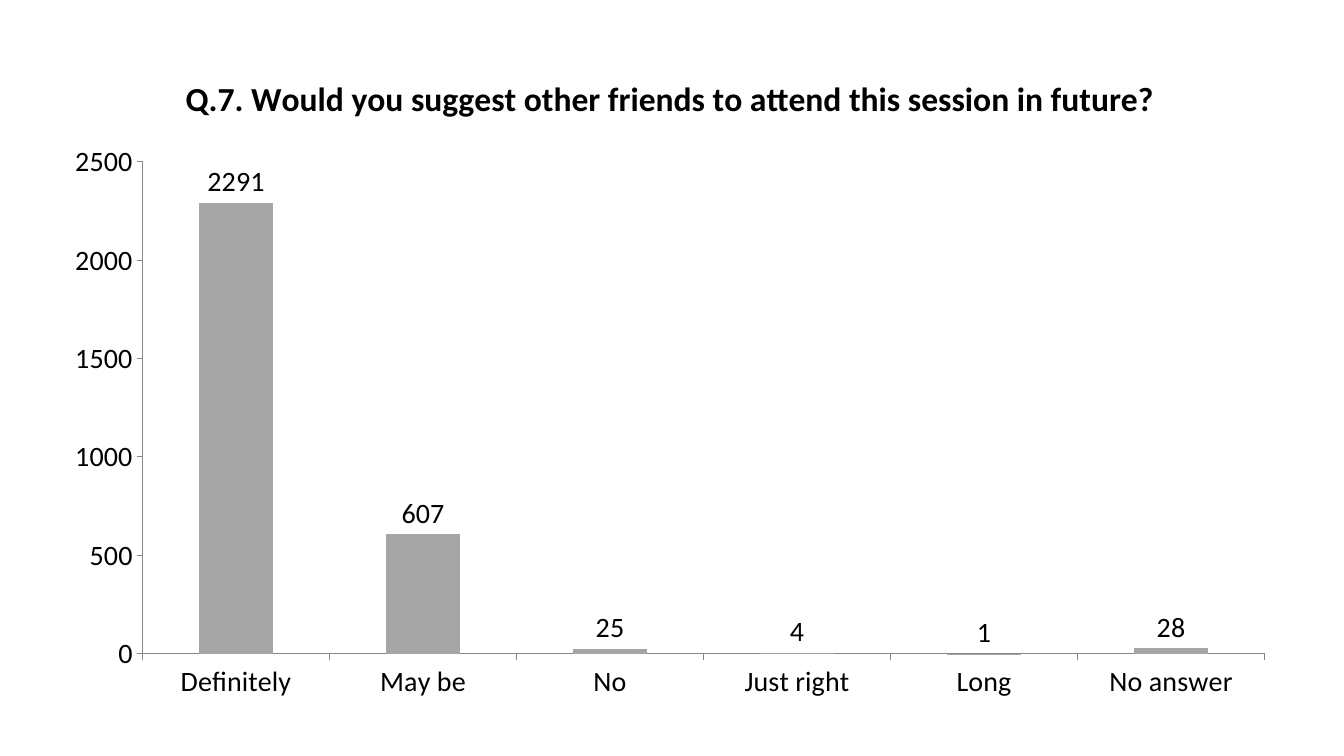
from typing import NamedTuple

import pptx
import pptx.chart.axis
import pptx.chart.data
import pptx.dml.color
import pptx.enum.chart
import pptx.util

Pt = pptx.util.Pt
BLACK = pptx.dml.color.RGBColor(0x00, 0x00, 0x00)
GRAY = pptx.dml.color.RGBColor(0xA5, 0xA5, 0xA5)
LINE = pptx.dml.color.RGBColor(0x86, 0x86, 0x86)
FONT = "Calibri"
TITLE = "Q.7. Would you suggest other friends to attend this session in future?"


class Answer(NamedTuple):
    label: str
    count: int


ANSWERS = [
    Answer("Definitely", 2291),
    Answer("May be", 607),
    Answer("No", 25),
    Answer("Just right", 4),
    Answer("Long", 1),
    Answer("No answer", 28),
]


def style_axis(axis: pptx.chart.axis._BaseAxis) -> None:
    axis.has_major_gridlines = False
    axis.major_tick_mark = pptx.enum.chart.XL_TICK_MARK.OUTSIDE
    axis.minor_tick_mark = pptx.enum.chart.XL_TICK_MARK.NONE
    axis.format.line.color.rgb = LINE
    axis.format.line.width = Pt(0.75)


def main() -> None:
    deck = pptx.Presentation()
    deck.slide_width, deck.slide_height = Pt(960), Pt(540)
    slide = deck.slides.add_slide(deck.slide_layouts[6])

    data = pptx.chart.data.CategoryChartData()
    data.categories = [answer.label for answer in ANSWERS]
    data.add_series(TITLE, [answer.count for answer in ANSWERS])
    chart = slide.shapes.add_chart(
        pptx.enum.chart.XL_CHART_TYPE.COLUMN_CLUSTERED,
        Pt(36), Pt(36.7), Pt(885), Pt(471.6), data,
    ).chart
    chart.font.name = FONT
    chart.font.size = Pt(20)
    chart.font.color.rgb = BLACK
    chart.has_legend = False

    chart.has_title = True
    chart.chart_title.include_in_layout = False
    head = chart.chart_title.text_frame.paragraphs[0]
    head.text = TITLE
    head.font.name = FONT
    head.font.size = Pt(24)
    head.font.bold = True
    head.font.color.rgb = BLACK

    style_axis(chart.category_axis)
    style_axis(chart.value_axis)
    chart.value_axis.minimum_scale = 0
    chart.value_axis.maximum_scale = 2500
    chart.value_axis.major_unit = 500

    plot = chart.plots[0]
    plot.gap_width = 150
    plot.vary_by_categories = False
    bars = plot.series[0].format
    bars.fill.solid()
    bars.fill.fore_color.rgb = GRAY
    plot.has_data_labels = True
    labels = plot.data_labels
    labels.show_value = True
    labels.position = pptx.enum.chart.XL_LABEL_POSITION.OUTSIDE_END

    deck.save("out.pptx")


if __name__ == "__main__":
    main()
